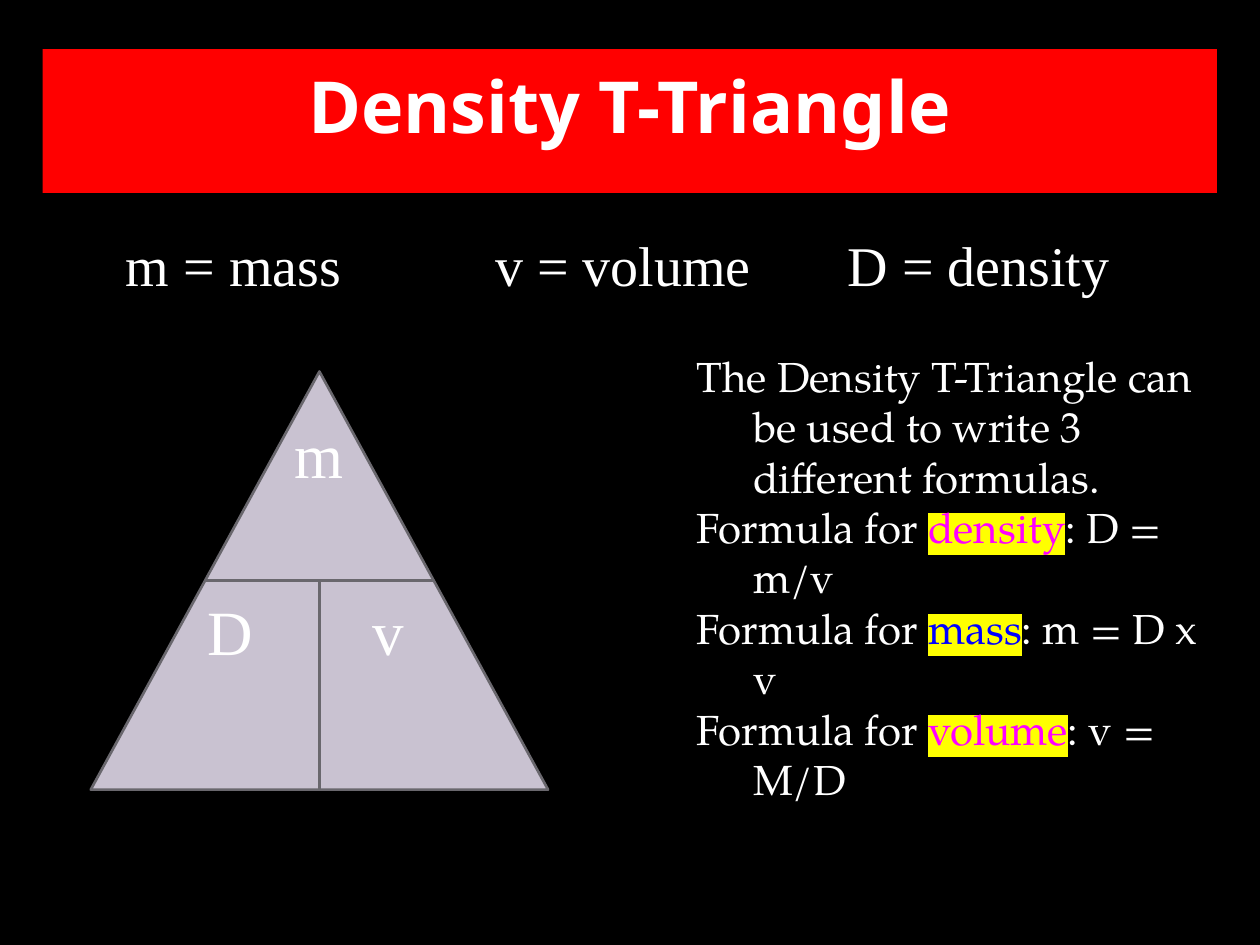
from dataclasses import dataclass

from lxml.etree import SubElement
from pptx import Presentation
from pptx.dml.color import RGBColor
from pptx.enum.shapes import MSO_CONNECTOR, MSO_SHAPE
from pptx.enum.text import MSO_ANCHOR, MSO_AUTO_SIZE, PP_ALIGN
from pptx.oxml.ns import qn
from pptx.util import Cm, Pt


@dataclass(frozen=True)
class Theme:
    background: str = "000000"
    banner: str = "FF0000"
    text: str = "FFFFFF"
    triangle: str = "C9C2D1"
    outline: str = "69676D"
    highlight: str = "FFFF00"
    magenta: str = "FF00FF"
    blue: str = "0000FF"
    title_font: str = "Noto Sans"
    body_font: str = "TeX Gyre Pagella"
    label_font: str = "Times New Roman"
    title_size: int = 41
    body_size: int = 24
    label_size: int = 36
    legend_size: int = 32
    line_width: float = 1.5


THEME = Theme()


def rgb(value):
    return RGBColor.from_string(value)


def add_text(paragraph, text, *, font, size, color=THEME.text, bold=False, highlight=None):
    run = paragraph.add_run()
    run.text = text
    run.font.size = Pt(size)
    run.font.bold = bold
    run.font.color.rgb = rgb(color)
    if highlight:
        mark = SubElement(run.font._element, qn("a:highlight"))
        SubElement(mark, qn("a:srgbClr"), val=highlight)
    run.font.name = font


def place(shape, left, top, width, height):
    shape.left, shape.top, shape.width, shape.height = left, top, width, height


def prepare_frame(shape, inset=Cm(0.25)):
    frame = shape.text_frame
    frame.word_wrap = True
    frame.auto_size = MSO_AUTO_SIZE.NONE
    frame.vertical_anchor = MSO_ANCHOR.TOP
    frame.margin_left = frame.margin_right = Cm(0.25)
    frame.margin_top = frame.margin_bottom = inset
    return frame


def add_title(slide, box):
    title = slide.shapes.title
    place(title, *box)
    title.fill.solid()
    title.fill.fore_color.rgb = rgb(THEME.banner)
    paragraph = prepare_frame(title).paragraphs[0]
    paragraph.alignment = PP_ALIGN.CENTER
    add_text(paragraph, "Density T-Triangle", font=THEME.title_font,
             size=THEME.title_size, bold=True)


def add_legend(slide, box):
    frame = prepare_frame(slide.shapes.add_textbox(*box), inset=Cm(0.13))
    paragraph = frame.paragraphs[0]
    # Tab stops set the three columns
    tabs = SubElement(paragraph._p.get_or_add_pPr(), qn("a:tabLst"))
    for position in (Cm(7.44), Cm(14.55)):
        SubElement(tabs, qn("a:tab"), pos=str(position), algn="l")
    add_text(paragraph, "m = mass\tv = volume\tD = density",
             font=THEME.label_font, size=THEME.legend_size)


def add_line(slide, *ends):
    line = slide.shapes.add_connector(MSO_CONNECTOR.STRAIGHT, *ends)
    line.line.color.rgb = rgb(THEME.outline)
    line.line.width = Pt(THEME.line_width)
    SubElement(line._element.spPr, qn("a:effectLst"))


def add_triangle(slide, box):
    left, top, width, height = box
    triangle = slide.shapes.add_shape(MSO_SHAPE.ISOSCELES_TRIANGLE, *box)
    triangle.shadow.inherit = False
    triangle.fill.solid()
    triangle.fill.fore_color.rgb = rgb(THEME.triangle)
    triangle.line.color.rgb = rgb(THEME.outline)
    triangle.line.width = Pt(THEME.line_width)

    # The T: a bar at half height, and a stem down to the base
    center, middle = left + width // 2, top + height // 2
    add_line(slide, left + width // 4, middle, left + width * 3 // 4, middle)
    add_line(slide, center, middle, center, top + height)

    labels = (
        ("m", Cm(3.86), Cm(0.64), Cm(1.57), Cm(1.47)),
        ("D", Cm(2.11), height // 2, Cm(1.75), Cm(2.44)),
        ("v", Cm(5.44), height // 2, Cm(1.75), Cm(1.75)),
    )
    for text, across, down, label_width, label_height in labels:
        label = slide.shapes.add_textbox(left + across, top + down, label_width, label_height)
        add_text(prepare_frame(label).paragraphs[0], text,
                 font=THEME.label_font, size=THEME.label_size)


def add_formulas(slide, box):
    body = slide.placeholders[1]
    place(body, *box)
    frame = prepare_frame(body)
    style = {"font": THEME.body_font, "size": THEME.body_size}
    formulas = (
        ("density", "D = m/v", THEME.magenta),
        ("mass", "m = D x v", THEME.blue),
        ("volume", "v = M/D", THEME.magenta),
    )
    add_text(frame.paragraphs[0],
             "The Density T-Triangle can be used to write 3 different formulas.", **style)
    for quantity, formula, color in formulas:
        paragraph = frame.add_paragraph()
        add_text(paragraph, "Formula for ", **style)
        add_text(paragraph, quantity, color=color, highlight=THEME.highlight, **style)
        add_text(paragraph, f": {formula}", **style)

    # Hanging indent without bullets
    for paragraph in frame.paragraphs:
        properties = paragraph._p.get_or_add_pPr()
        properties.set("marL", str(Cm(1.52)))
        properties.set("indent", str(Cm(-1.14)))
        SubElement(properties, qn("a:buNone"))
        paragraph.space_before = Pt(0)


def main():
    presentation = Presentation()
    presentation.slide_width, presentation.slide_height = Cm(25.4), Cm(19.05)
    slide = presentation.slides.add_slide(presentation.slide_layouts[1])
    slide.background.fill.solid()
    slide.background.fill.fore_color.rgb = rgb(THEME.background)

    add_title(slide, (Cm(0.86), Cm(0.99), Cm(23.67), Cm(2.9)))
    add_formulas(slide, (Cm(13.41), Cm(6.81), Cm(11.1), Cm(9.5)))
    add_triangle(slide, (Cm(1.83), Cm(7.49), Cm(9.22), Cm(8.43)))
    add_legend(slide, (Cm(2.29), Cm(4.52), Cm(22.2), Cm(1.63)))
    presentation.save("out.pptx")


if __name__ == "__main__":
    main()
